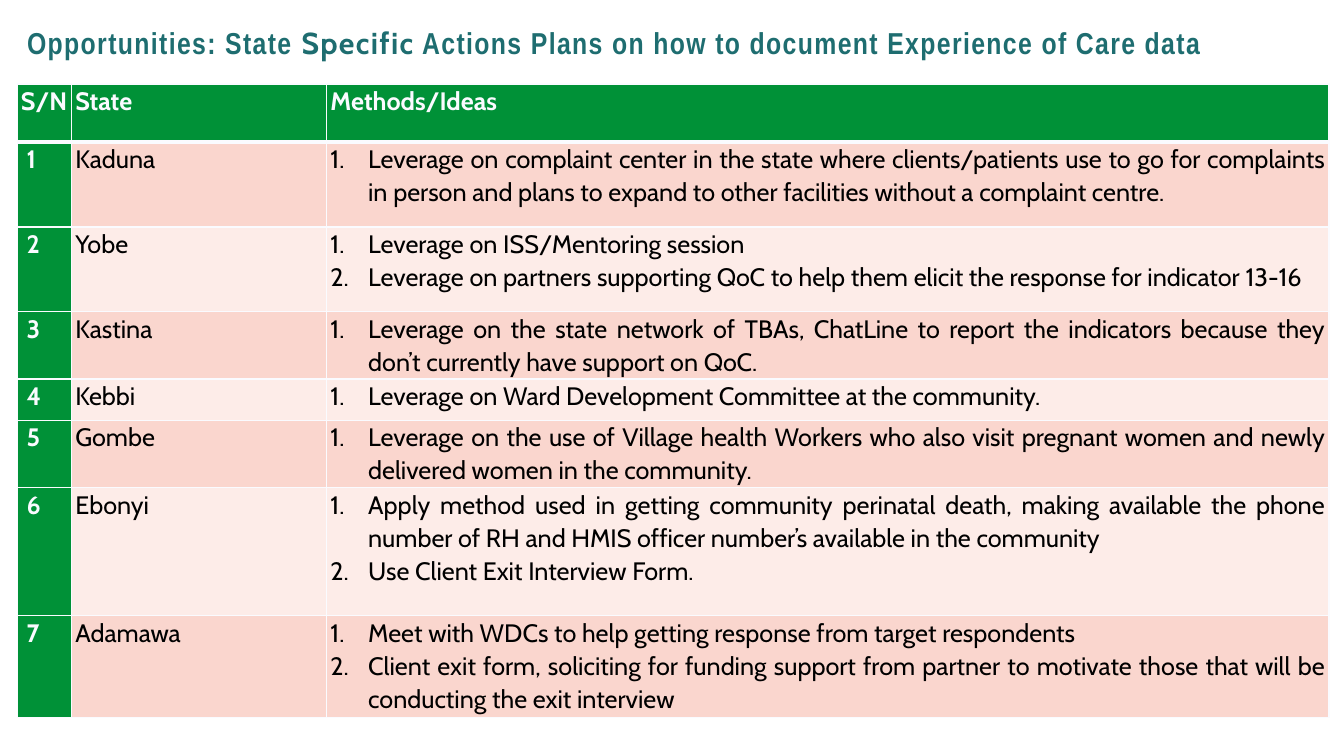
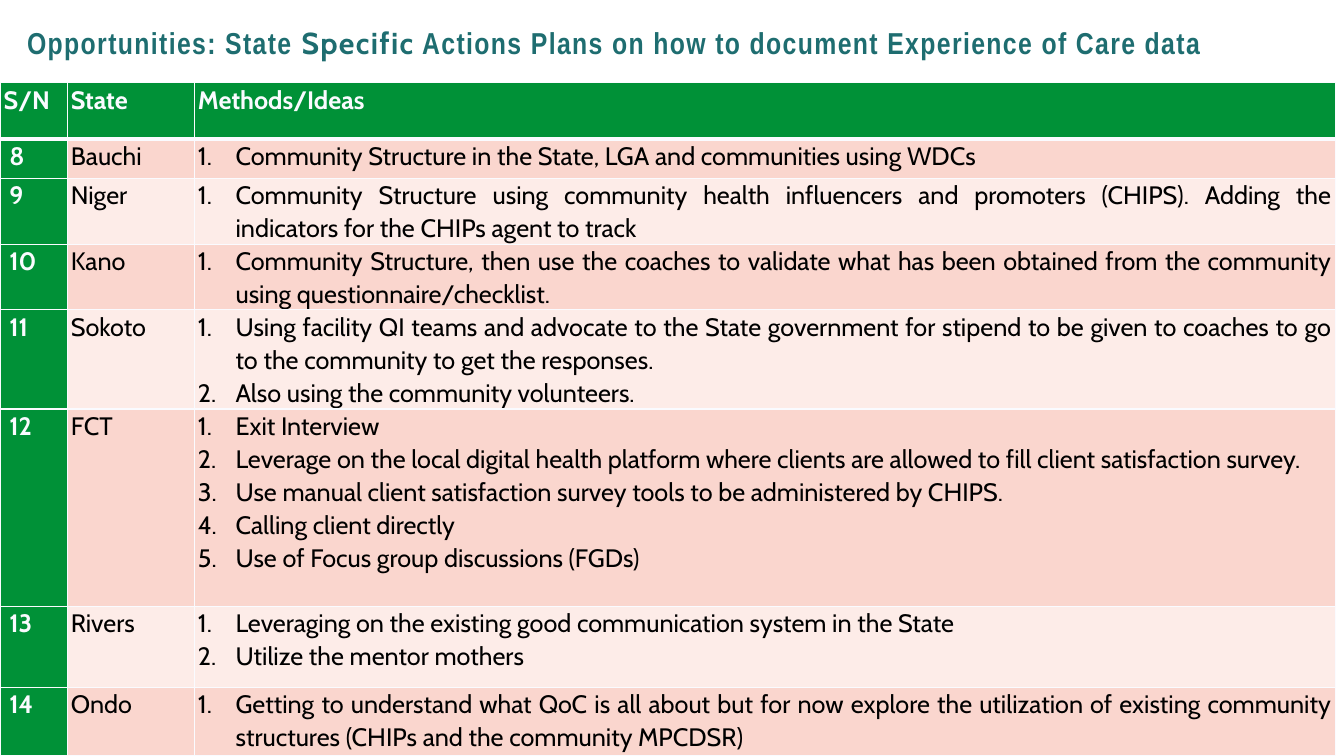
from lxml import etree
from pptx import Presentation
from pptx.dml.color import RGBColor
from pptx.enum.text import MSO_ANCHOR, PP_ALIGN
from pptx.oxml.ns import qn
from pptx.util import Inches, Pt

JUSTIFY = PP_ALIGN.JUSTIFY
MIDDLE = MSO_ANCHOR.MIDDLE


def rgb(value):
    return RGBColor.from_string(value)


class Deck:
    """Shared style and the current slide; lengths are percent of the slide."""
    TITLE_FONT, BODY_FONT = "Arial Narrow", "Cabin"
    TITLE_SIZE, BODY_SIZE = 21.6, 18
    TEAL, GREEN, WHITE, BLACK = "1E6D70", "009137", "FAFBFF", "000000"
    BANDS = ("FAD6CE", "FDECE8")
    THIN, THICK = 1, 3
    PAD, NUMBER_PAD, HANG = 0.28, 0.7, 2.81

    def __init__(self):
        self.prs = Presentation()
        self.prs.slide_width = Inches(13.33)
        self.prs.slide_height = Inches(7.5)
        self.s = None

    def x(self, share):
        return round(self.prs.slide_width * share / 100)

    def y(self, share):
        return round(self.prs.slide_height * share / 100)

    def add_slide(self):
        self.s = self.prs.slides.add_slide(self.prs.slide_layouts[6])

    def run(self, p, text, font, size, color, bold):
        r = p.add_run()
        r.text = text
        r.font.name = font
        r.font.size = Pt(size)
        r.font.color.rgb = rgb(color)
        r.font.bold = bold
        return r

    def title(self, runs):
        sp = self.s.shapes.add_textbox(self.x(1.28), self.y(2.27),
                                       self.x(97.6), self.y(7.2))
        tf = sp.text_frame
        tf.word_wrap = True
        tf.vertical_anchor = MIDDLE
        p = tf.paragraphs[0]
        p.line_spacing = 0.9
        for text, font in runs:
            r = self.run(p, text, font, self.TITLE_SIZE, self.TEAL, True)
            r.font._element.set("spc", "100")

    def borders(self, cell, top, bottom):
        tc_pr = cell._tc.get_or_add_tcPr()
        widths = {"a:lnL": self.THIN, "a:lnR": self.THIN,
                  "a:lnT": top, "a:lnB": bottom}
        for tag, width in widths.items():
            ln = etree.SubElement(tc_pr, qn(tag), w=str(Pt(width)))
            fill = etree.SubElement(ln, qn("a:solidFill"))
            etree.SubElement(fill, qn("a:srgbClr"), val=self.WHITE)

    def number(self, p):
        p_pr = p._p.get_or_add_pPr()
        p_pr.set("marL", str(self.x(self.HANG)))
        p_pr.set("indent", str(-self.x(self.HANG)))
        etree.SubElement(p_pr, qn("a:buFont"), typeface="+mj-lt")
        etree.SubElement(p_pr, qn("a:buAutoNum"), type="arabicPeriod")

    def cell(self, cell, lines, row, col):
        header = row == 0
        green = header or col == 0
        self.borders(cell, self.THICK if row == 1 else self.THIN,
                     self.THICK if header else self.THIN)
        cell.fill.solid()
        cell.fill.fore_color.rgb = rgb(
            self.GREEN if green else self.BANDS[(row - 1) % 2])
        indented = col == 0 and not header
        cell.margin_left = self.x(self.NUMBER_PAD if indented else self.PAD)
        cell.margin_right = self.x(self.PAD)
        cell.margin_top = cell.margin_bottom = 0
        tf = cell.text_frame
        for i, text in enumerate(lines):
            p = tf.add_paragraph() if i else tf.paragraphs[0]
            if col == 2 and not header:
                self.number(p)
            p.alignment = JUSTIFY
            p.line_spacing = 1.07
            self.run(p, text, self.BODY_FONT, self.BODY_SIZE,
                     self.WHITE if green else self.BLACK, green)

    def table(self, left, top, widths, heights, first, states):
        rows = [(["S/N"], ["State"], ["Methods/Ideas"])]
        rows += [([str(n)], [state], ideas)
                 for n, (state, ideas) in enumerate(states, first)]
        frame = self.s.shapes.add_table(
            len(rows), len(widths), self.x(left), self.y(top),
            self.x(sum(widths)), self.y(sum(heights)))
        table = frame.table
        table.horz_banding = False
        for column, width in zip(table.columns, widths):
            column.width = self.x(width)
        for row, height in zip(table.rows, heights):
            row.height = self.y(height)
        for i, row in enumerate(rows):
            for j, lines in enumerate(row):
                self.cell(table.cell(i, j), lines, i, j)


# Content
TITLE = [
    ("Opportunities: State ", Deck.TITLE_FONT),
    ("Specific", Deck.BODY_FONT),
    (" Actions Plans on how to document Experience of Care data",
     Deck.TITLE_FONT),
]

STATES_1_TO_7 = [
    ("Kaduna", ["Leverage on complaint center in the state where "
                "clients/patients use to go for complaints in person and "
                "plans to expand to other facilities without a complaint "
                "centre."]),
    ("Yobe", ["Leverage on ISS/Mentoring session",
              "Leverage on partners supporting QoC to help them elicit the "
              "response for indicator 13-16"]),
    ("Kastina", ["Leverage on the state network of TBAs, ChatLine to report "
                 "the indicators because they don’t currently have support "
                 "on QoC."]),
    ("Kebbi", ["Leverage on Ward Development Committee at the community."]),
    ("Gombe", ["Leverage on the use of Village health Workers who also visit "
               "pregnant women and newly delivered women in the community."]),
    ("Ebonyi", ["Apply method used in getting community perinatal death, "
                "making available the phone number of RH and HMIS officer "
                "number’s available in the community",
                "Use Client Exit Interview Form."]),
    ("Adamawa", ["Meet with WDCs to help getting response from target "
                 "respondents",
                 "Client exit form, soliciting for funding support from "
                 "partner to motivate those that will be conducting the exit "
                 "interview"]),
]

STATES_8_TO_14 = [
    ("Bauchi", ["Community Structure in the State, LGA and communities using "
                "WDCs"]),
    ("Niger", ["Community Structure using community health influencers and "
               "promoters (CHIPS). Adding the indicators for the CHIPs agent "
               "to track"]),
    ("Kano", ["Community Structure, then use the coaches to validate what "
              "has been obtained from the community using "
              "questionnaire/checklist."]),
    ("Sokoto", ["Using facility QI teams and advocate to the State "
                "government for stipend to be given to coaches to go to the "
                "community to get the responses.",
                "Also using the community volunteers."]),
    ("FCT", ["Exit Interview",
             "Leverage on the local digital health platform where clients "
             "are allowed to fill client satisfaction survey.",
             "Use manual client satisfaction survey tools to be administered "
             "by CHIPS.",
             "Calling client directly",
             "Use of Focus group discussions (FGDs)"]),
    ("Rivers", ["Leveraging on the existing good communication system in the "
                "State",
                "Utilize the mentor mothers"]),
    ("Ondo", ["Getting to understand what QoC is all about but for now "
              "explore the utilization of existing community structures "
              "(CHIPs and the community MPCDSR)"]),
]

# Left, top, column widths, row heights, first number, states
TABLES = [
    (1.28, 11.1, [4.05, 18.98, 74.57],
     [7.73, 11.2, 11.2, 8.9, 5.5, 8.9, 16.93, 13.47], 1, STATES_1_TO_7),
    (0, 10.93, [5, 9.45, 84.9],
     [7.47, 5.2, 8.7, 8.7, 13.1, 26.1, 10.7, 9.1], 8, STATES_8_TO_14),
]


def main():
    deck = Deck()
    for table in TABLES:
        deck.add_slide()
        deck.title(TITLE)
        deck.table(*table)
    deck.prs.save("out.pptx")


if __name__ == "__main__":
    main()
